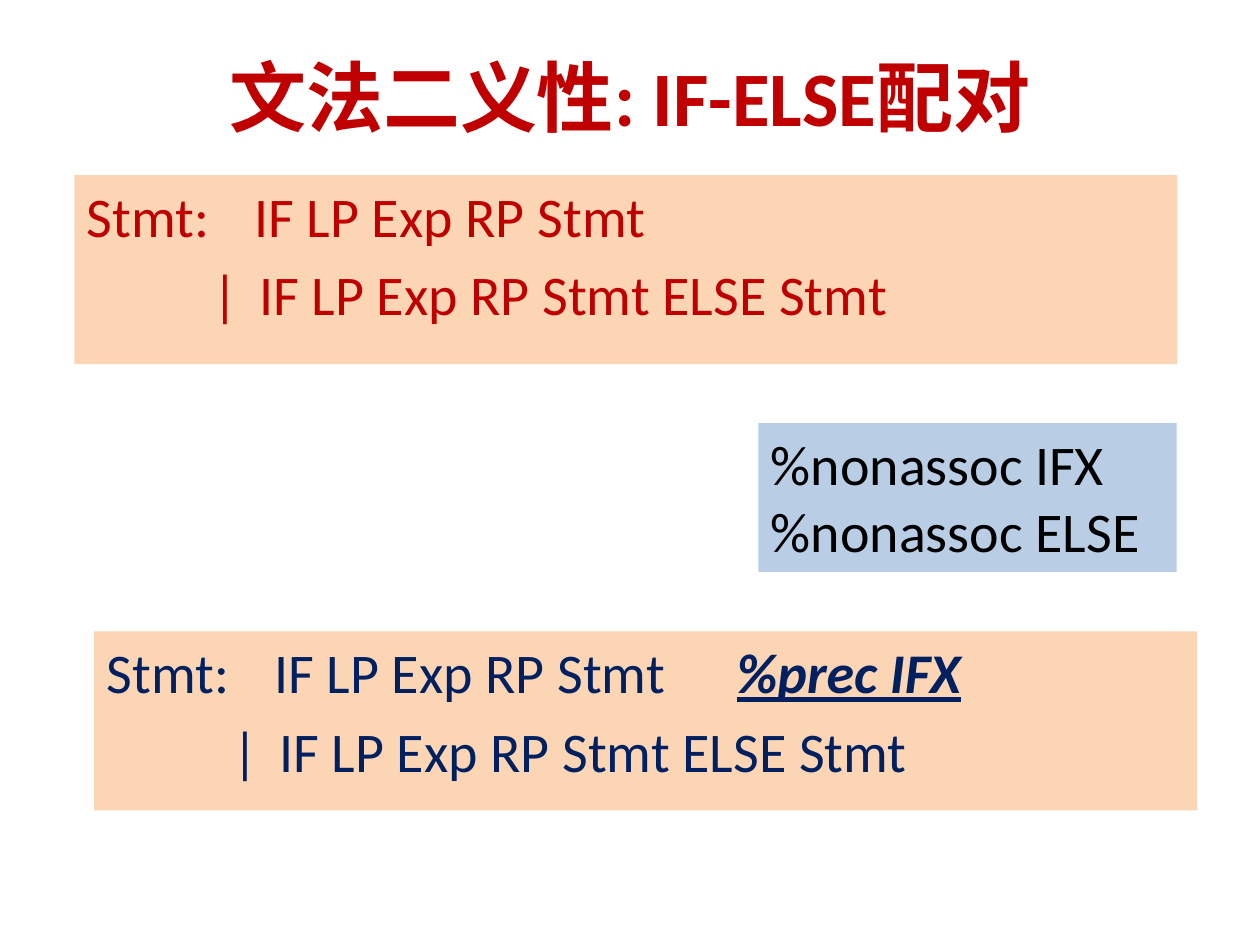
from pptx import Presentation
from pptx.dml.color import RGBColor
from pptx.enum.shapes import MSO_SHAPE
from pptx.enum.text import MSO_ANCHOR, PP_ALIGN
from pptx.oxml.ns import qn
from pptx.util import Cm, Pt

RECT = MSO_SHAPE.RECTANGLE
TOP, MIDDLE = MSO_ANCHOR.TOP, MSO_ANCHOR.MIDDLE
LEFT, CENTER = PP_ALIGN.LEFT, PP_ALIGN.CENTER

THEME = {
    "font": "Calibri", "title": 44, "body": 32, "gap": 6.4,
    "red": "C00000", "navy": "002060", "black": "000000",
    "peach": "FCD5B5", "blue": "B9CDE5",
}

TITLE = "文法二义性: IF-ELSE配对"
TITLE_AT = (1.27, 0.33, 22.86, 3.18)

# A line is its runs (text, stressed) and its tab stops in cm.
SHORT = "Stmt:\tIF LP Exp RP Stmt"
LONG = ([("\t|\tIF LP Exp RP Stmt ELSE Stmt", False)], (2.54, 3.48))
BOXES = [
    {"at": (1.5, 3.53, 22.23, 3.81), "fill": "peach", "ink": "red", "gap": THEME["gap"],
     "lines": [([(SHORT, False)], (3.38,)), LONG]},
    {"at": (15.29, 8.53, 8.43, 3), "fill": "blue", "ink": "black", "gap": 0,
     "lines": [([("%nonassoc IFX", False)], ()),
               ([("%nonassoc ELSE", False)], ())]},
    {"at": (1.9, 12.73, 22.23, 3.61), "fill": "peach", "ink": "navy", "gap": THEME["gap"],
     "lines": [([(SHORT + "\t", False), ("%prec IFX", True)], (3.38, 12.7)),
               LONG]},
]


def color(name):
    return RGBColor.from_string(THEME[name])


def add_run(para, text, size, ink, bold=False, stress=False):
    run = para.add_run()
    run.text = text
    font = run.font
    font.name, font.size = THEME["font"], Pt(THEME[size])
    font.color.rgb = color(ink)
    font.bold = bold or stress
    font.italic = font.underline = stress


def set_tabs(para, stops):
    if not stops:
        return
    tabs = para._p.get_or_add_pPr().makeelement(qn("a:tabLst"), {})
    for stop in stops:
        tabs.append(tabs.makeelement(qn("a:tab"), {"pos": str(Cm(stop)), "algn": "l"}))
    para._p.get_or_add_pPr().append(tabs)


def add_title(slide):
    title = slide.shapes.title
    title.left, title.top, title.width, title.height = map(Cm, TITLE_AT)
    title.text_frame.vertical_anchor = MIDDLE
    para = title.text_frame.paragraphs[0]
    para.alignment = CENTER
    add_run(para, TITLE, "title", "red", bold=True)


def add_box(slide, box):
    shape = slide.shapes.add_shape(RECT, *map(Cm, box["at"]))
    shape.shadow.inherit = False
    shape.fill.solid()
    shape.fill.fore_color.rgb = color(box["fill"])
    shape.line.fill.background()
    frame = shape.text_frame
    frame.word_wrap = True
    frame.vertical_anchor = TOP
    for i, (runs, stops) in enumerate(box["lines"]):
        para = frame.add_paragraph() if i else frame.paragraphs[0]
        para.alignment = LEFT
        para.space_before = Pt(box["gap"])
        set_tabs(para, stops)
        for text, stress in runs:
            add_run(para, text, "body", box["ink"], stress=stress)


def main():
    deck = Presentation()
    deck.slide_width, deck.slide_height = Cm(25.4), Cm(19.05)
    slide = deck.slides.add_slide(deck.slide_layouts[5])
    add_title(slide)
    for box in BOXES:
        add_box(slide, box)
    deck.save("out.pptx")


if __name__ == "__main__":
    main()
